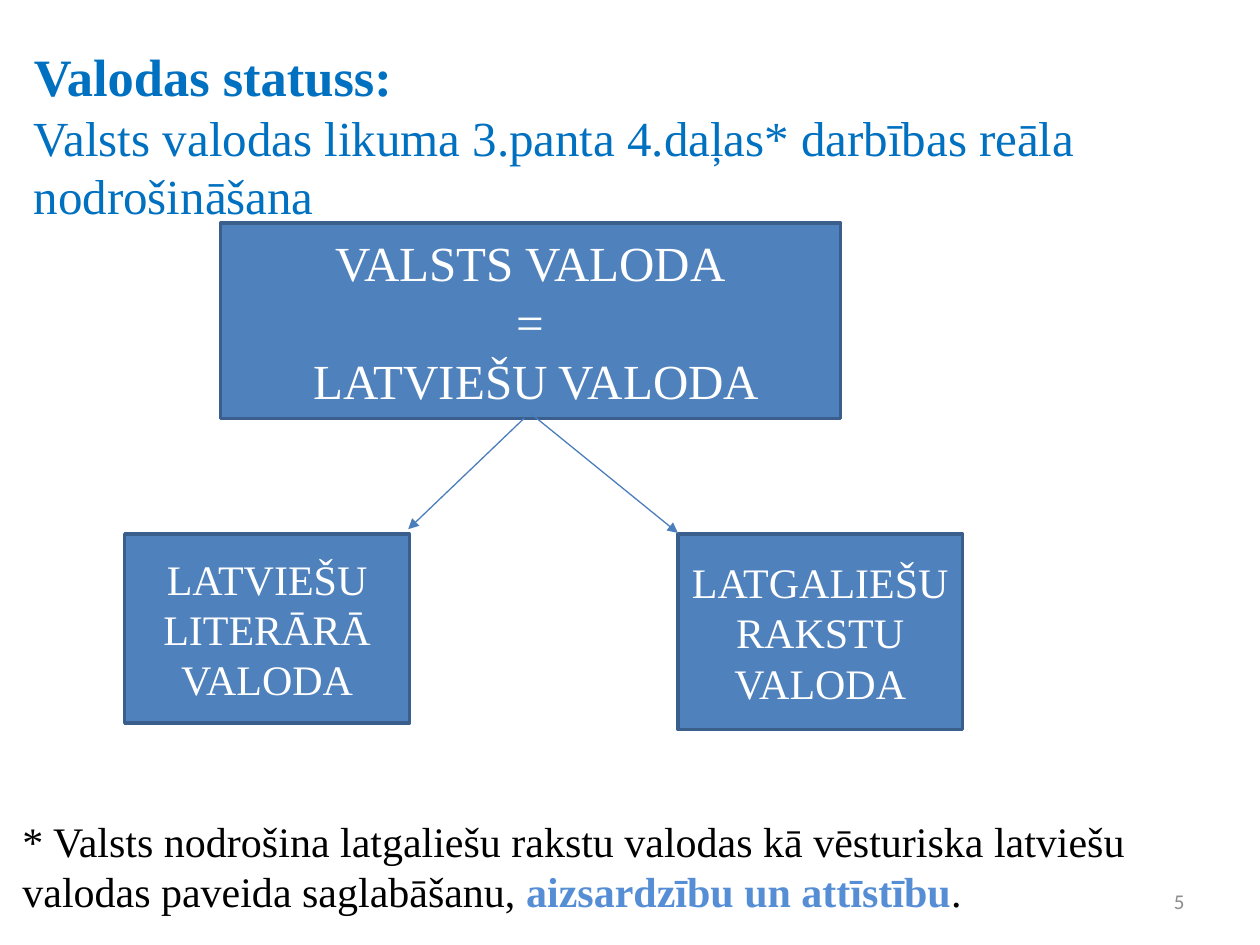
from lxml.etree import SubElement
from pptx import Presentation
from pptx.dml.color import RGBColor
from pptx.enum.shapes import MSO_CONNECTOR, MSO_SHAPE
from pptx.enum.text import MSO_ANCHOR, PP_ALIGN
from pptx.oxml.ns import qn
from pptx.util import Inches, Pt

COLORS = {
    "title": "0070C0",
    "box": "4F81BD",
    "border": "3A5F8C",
    "arrow": "4B7EBC",
    "accent": "558ED5",
    "number": "8C8C8C",
    "white": "FFFFFF",
    "black": "000000",
}
SERIF = "Times New Roman"


def write(shape, paragraphs, align, anchor, font_name=SERIF):
    frame = shape.text_frame
    frame.word_wrap = True
    frame.vertical_anchor = anchor
    for index, spans in enumerate(paragraphs):
        para = frame.paragraphs[0] if index == 0 else frame.add_paragraph()
        para.alignment = align
        for text, size, color, bold in spans:
            span = para.add_run()
            span.text = text
            formats = {"name": font_name, "size": Pt(size), "bold": bold}
            for name, value in formats.items():
                setattr(span.font, name, value)
            span.font.color.rgb = RGBColor.from_string(COLORS[color])


deck = Presentation()
deck.slide_width, deck.slide_height = Inches(10), Inches(7.5)
page = deck.slides.add_slide(deck.slide_layouts[6])

title = page.shapes.add_textbox(Inches(0.17), Inches(0.3), Inches(9.83), Inches(1.55))
write(title, [
    [("Valodas statuss:", 30, "title", True)],
    [("Valsts valodas likuma 3.panta 4.daļas* darbības reāla nodrošināšana", 28, "title", False)],
], PP_ALIGN.LEFT, MSO_ANCHOR.TOP)

number = page.shapes.add_textbox(Inches(7.17), Inches(6.95), Inches(2.33), Inches(0.4))
write(number, [[("5", 12, "number", False)]], PP_ALIGN.RIGHT, MSO_ANCHOR.MIDDLE, "Calibri")

language_boxes = [
    ((1.75, 1.77, 4.92, 1.55), 28, ["VALSTS VALODA", "=", " LATVIEŠU VALODA"]),
    ((0.99, 4.24, 2.26, 1.5), 24, ["LATVIEŠU LITERĀRĀ VALODA"]),
    ((5.38, 4.24, 2.26, 1.55), 24, ["LATGALIEŠU RAKSTU VALODA"]),
]
for place, size, lines in language_boxes:
    box = page.shapes.add_shape(MSO_SHAPE.RECTANGLE, *map(Inches, place))
    box.shadow.inherit = False
    box.fill.solid()
    box.fill.fore_color.rgb = RGBColor.from_string(COLORS["box"])
    box.line.color.rgb = RGBColor.from_string(COLORS["border"])
    box.line.width = Pt(2)
    write(box, [[(line, size, "white", False)] for line in lines], PP_ALIGN.CENTER, MSO_ANCHOR.MIDDLE)

for ends in [(4.21, 3.28, 5.38, 4.23), (4.16, 3.32, 3.24, 4.2)]:
    arrow = page.shapes.add_connector(MSO_CONNECTOR.STRAIGHT, *map(Inches, ends))
    arrow.line.color.rgb = RGBColor.from_string(COLORS["arrow"])
    arrow.line.width = Pt(0.75)
    SubElement(arrow.line._get_or_add_ln(), qn("a:tailEnd"), type="triangle")
    SubElement(arrow._element.spPr, qn("a:effectLst"))

footnote = page.shapes.add_textbox(Inches(0.08), Inches(6.42), Inches(9.83), Inches(0.91))
write(footnote, [[
    ("* Valsts nodrošina latgaliešu rakstu valodas kā vēsturiska latviešu valodas paveida saglabāšanu, ",
     24, "black", False),
    ("aizsardzību un attīstību", 24, "accent", True),
    (".", 24, "black", False),
]], PP_ALIGN.LEFT, MSO_ANCHOR.TOP)

deck.save("out.pptx")
